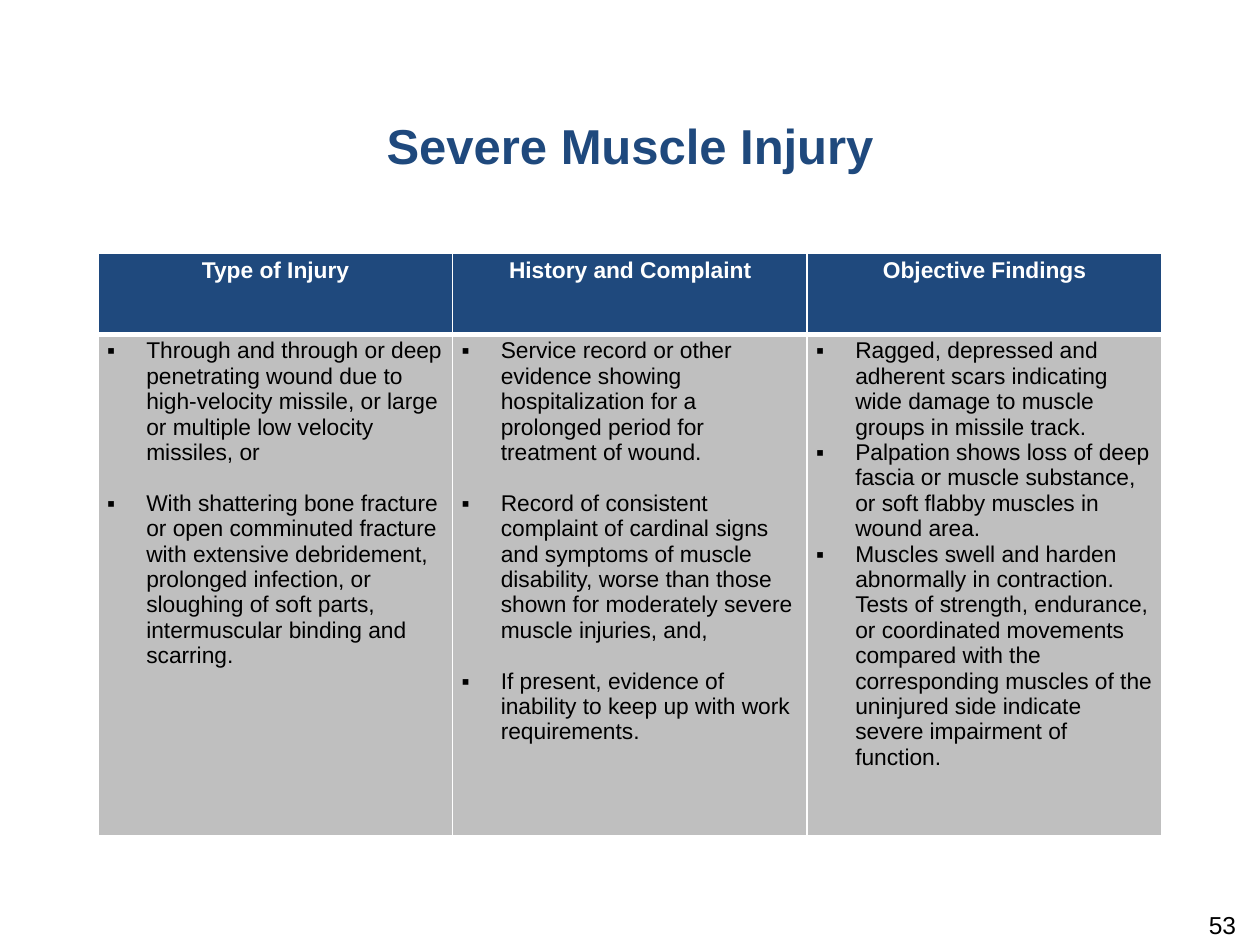
from lxml import etree
from pptx import Presentation
from pptx.dml.color import RGBColor
from pptx.enum.text import MSO_ANCHOR, MSO_AUTO_SIZE, PP_ALIGN
from pptx.oxml.ns import qn
from pptx.util import Cm, Pt

LEFT, CENTER, RIGHT = PP_ALIGN.LEFT, PP_ALIGN.CENTER, PP_ALIGN.RIGHT
TOP = MSO_ANCHOR.TOP
NO_AUTOFIT = MSO_AUTO_SIZE.NONE

COLORS = {"navy": "1F497D", "gray": "BFBFBF", "white": "FFFFFF", "black": "000000"}
TITLE_FONT = {"name": "Arial", "size": Pt(28), "bold": True}
HEADER_FONT = {"name": "Arial", "size": Pt(13), "bold": True}
BODY_FONT = {"name": "Arial", "size": Pt(13), "bold": False}
NUMBER_FONT = {"name": "Arial", "size": Pt(14), "bold": False}
CELL_FORMAT = {
    "margin_left": Cm(0.18), "margin_right": Cm(0.18),
    "margin_top": Cm(0.08), "margin_bottom": Cm(0.08), "vertical_anchor": TOP,
}
BULLET_INDENT = Cm(0.79)
ROW_HEIGHTS = (Cm(1.63), Cm(10.11))

COLUMNS = [
    ("Type of Injury", Pt(14.5), [
        "Through and through or deep penetrating wound due to high-velocity missile, "
        "or large or multiple low velocity missiles, or",
        "With shattering bone fracture or open comminuted fracture with extensive debridement, "
        "prolonged infection, or sloughing of soft parts, intermuscular binding and scarring.",
    ]),
    ("History and Complaint", Pt(14.5), [
        "Service record or other evidence showing hospitalization for a prolonged period "
        "for treatment of wound.",
        "Record of consistent complaint of cardinal signs and symptoms of muscle disability, "
        "worse than those shown for moderately severe muscle injuries, and,",
        "If present, evidence of inability to keep up with work requirements.",
    ]),
    ("Objective Findings", Pt(0), [
        "Ragged, depressed and adherent scars indicating wide damage to muscle groups "
        "in missile track.",
        "Palpation shows loss of deep fascia or muscle substance, or soft flabby muscles "
        "in wound area.",
        "Muscles swell and harden abnormally in contraction. Tests of strength, endurance, "
        "or coordinated movements compared with the corresponding muscles of the uninjured "
        "side indicate severe impairment of function.",
    ]),
]


def apply_format(target, values):
    """Set each attribute of the target from a dict."""
    for name, value in values.items():
        setattr(target, name, value)


def write(para, text, font, color, align):
    """Put one formatted run into a paragraph."""
    para.alignment = align
    span = para.add_run()
    span.text = text
    apply_format(span.font, font)
    span.font.color.rgb = RGBColor.from_string(COLORS[color])


def add_bullet(para):
    """Give a paragraph a square bullet with a hanging indent."""
    properties = para._p.get_or_add_pPr()
    properties.set("marL", str(BULLET_INDENT))
    properties.set("indent", str(-BULLET_INDENT))
    etree.SubElement(properties, qn("a:buFont")).set("typeface", "Arial")
    etree.SubElement(properties, qn("a:buChar")).set("char", "▪")


def style_cell(cell, fill, top, bottom):
    """Set the margins, white borders and fill of a cell."""
    apply_format(cell, CELL_FORMAT)
    properties = cell._tc.get_or_add_tcPr()
    for side, width in (("L", 1), ("R", 1), ("T", top), ("B", bottom)):
        line = etree.SubElement(properties, qn(f"a:ln{side}"), w=str(Pt(width)))
        paint = etree.SubElement(line, qn("a:solidFill"))
        etree.SubElement(paint, qn("a:srgbClr")).set("val", COLORS["white"])
    cell.fill.solid()
    cell.fill.fore_color.rgb = RGBColor.from_string(COLORS[fill])


def place_title(page, left, top, width, height):
    """Place and format the title placeholder."""
    title = page.shapes.title
    apply_format(title, {"left": left, "top": top, "width": width, "height": height})
    apply_format(title.text_frame,
                 {"vertical_anchor": TOP, "word_wrap": True, "auto_size": NO_AUTOFIT})
    write(title.text_frame.paragraphs[0], "Severe Muscle Injury", TITLE_FONT, "navy", CENTER)


def place_table(page, left, top, width):
    """Place the injury table with equal columns."""
    table = page.shapes.add_table(
        2, len(COLUMNS), left, top, width, sum(ROW_HEIGHTS)).table
    for row, height in zip(table.rows, ROW_HEIGHTS):
        row.height = height
    for index, (heading, gap, items) in enumerate(COLUMNS):
        table.columns[index].width = width // len(COLUMNS)
        header, body = table.cell(0, index), table.cell(1, index)
        style_cell(header, "navy", 1, 3)
        style_cell(body, "gray", 3, 1)
        write(header.text_frame.paragraphs[0], heading, HEADER_FONT, "white", CENTER)
        frame = body.text_frame
        for number, item in enumerate(items):
            para = frame.add_paragraph() if number else frame.paragraphs[0]
            add_bullet(para)
            if number:
                para.space_before = gap
            write(para, item, BODY_FONT, "black", LEFT)


def place_page_number(page, left, top, width, height):
    """Place the page number at the lower right."""
    frame = page.shapes.add_textbox(left, top, width, height).text_frame
    apply_format(frame, {"word_wrap": True, "margin_top": 0, "vertical_anchor": TOP})
    write(frame.paragraphs[0], "53", NUMBER_FONT, "black", RIGHT)


def main():
    """Build the slide and save the deck."""
    deck = Presentation()
    deck.slide_width, deck.slide_height = Cm(25.4), Cm(19.05)
    page = deck.slides.add_slide(deck.slide_layouts[5])
    place_title(page, Cm(0), Cm(2.21), deck.slide_width, Cm(3.02))
    place_table(page, Cm(1.98), Cm(5.11), Cm(21.44))
    place_page_number(page, Cm(19.25), Cm(18.34), Cm(5.92), Cm(0.71))
    deck.save("out.pptx")


if __name__ == "__main__":
    main()
